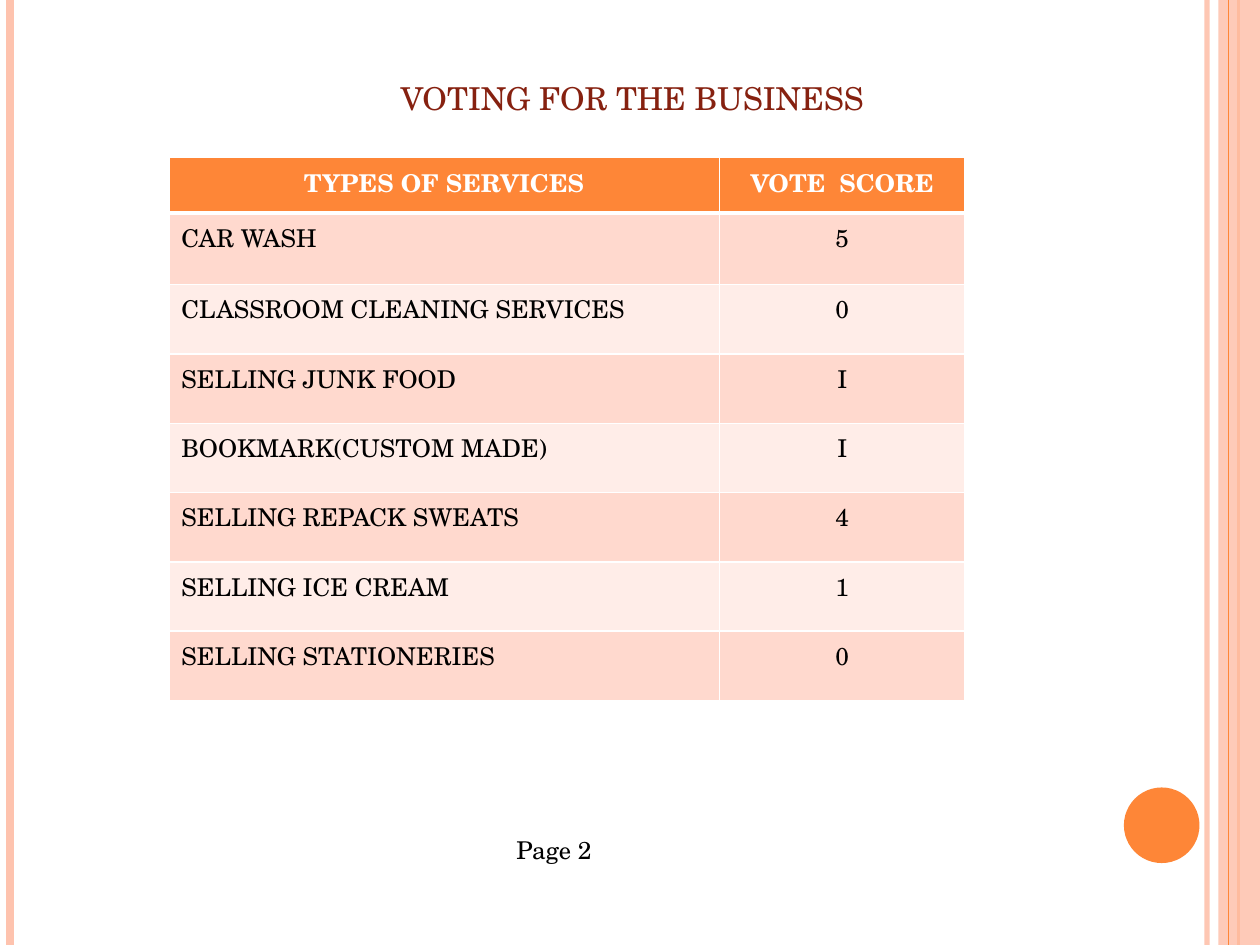
"""Build the slide with the vote scores for each business idea."""
from dataclasses import dataclass
from typing import Optional

from lxml.etree import SubElement
from pptx import Presentation
from pptx.dml.color import RGBColor
from pptx.enum.shapes import MSO_CONNECTOR as Connector, MSO_SHAPE as Preset
from pptx.enum.text import MSO_ANCHOR as Anchor, MSO_AUTO_SIZE as AutoSize, PP_ALIGN as Align
from pptx.oxml.ns import qn
from pptx.util import Inches, Pt


@dataclass(frozen=True)
class Theme:
    """Colours, font and type sizes of the slide."""
    orange: str = "FE8637"
    peach: str = "FEC3AE"
    brown: str = "862110"
    white: str = "FFFFFF"
    black: str = "000000"
    bands: tuple = ("FFD9CE", "FFEDE8")
    font: str = "TeX Gyre Schola"
    title_size: int = 18
    text_size: int = 14


@dataclass(frozen=True)
class Stripe:
    """A vertical line over the full slide height."""
    x: float
    color: str
    weight: float
    alpha: Optional[int] = None


@dataclass(frozen=True)
class Block:
    """A filled preset shape without an outline."""
    preset: Preset
    box: tuple
    color: str
    alpha: Optional[int] = None


@dataclass(frozen=True)
class Service:
    """A proposed service and its votes."""
    name: str
    score: str


THEME = Theme()
SLIDE_SIZE = (10, 7.5)
LOWER_STRIPES = (
    Stripe(9.58, THEME.peach, 3, 93),
    Stripe(0.08, THEME.peach, 4.5),
    Stripe(9.83, THEME.orange, 1.5),
)
SIDE_BAND = Block(Preset.RECTANGLE, (9.67, 0, 0.33, 7.5), THEME.peach, 87)
UPPER_STRIPE = Stripe(9.75, THEME.orange, 0.75)
DISC = Block(Preset.OVAL, (8.92, 6.25, 0.6, 0.6), THEME.orange)
HEADINGS = Service("TYPES OF SERVICES", "VOTE  SCORE")
SERVICES = (
    Service("CAR WASH", "5"),
    Service("CLASSROOM CLEANING SERVICES", "0"),
    Service("SELLING JUNK FOOD", "I"),
    Service("BOOKMARK(CUSTOM MADE)", "I"),
    Service("SELLING REPACK SWEATS", "4"),
    Service("SELLING ICE CREAM", "1"),
    Service("SELLING STATIONERIES", "0"),
)
COLUMN_WIDTHS = (4.37, 1.95)
ROW_HEIGHTS = (0.44, 0.57) + (0.55,) * 6


def set_alpha(fill, percent: Optional[int]) -> None:
    """Make a solid fill partly transparent."""
    if percent is not None:
        color = fill._xPr.find(qn("a:solidFill"))[0]
        SubElement(color, qn("a:alpha"), val=str(percent * 1000))


def draw_stripe(slide, stripe: Stripe) -> None:
    """Draw one vertical line."""
    x = Inches(stripe.x)
    line = slide.shapes.add_connector(Connector.STRAIGHT, x, 0, x, Inches(SLIDE_SIZE[1]))
    line.line.color.rgb = RGBColor.from_string(stripe.color)
    line.line.width = Pt(stripe.weight)
    set_alpha(line.line.fill, stripe.alpha)
    SubElement(line._element.spPr, qn("a:effectLst"))


def draw_block(slide, block: Block) -> None:
    """Draw one filled shape."""
    shape = slide.shapes.add_shape(block.preset, *map(Inches, block.box))
    shape.shadow.inherit = False
    shape.fill.solid()
    shape.fill.fore_color.rgb = RGBColor.from_string(block.color)
    set_alpha(shape.fill, block.alpha)
    shape.line.fill.background()


def write(frame, text: str, color: str, size: int, align: Align = Align.LEFT,
          bold: bool = False) -> None:
    """Put one formatted paragraph in a text frame."""
    frame.text = text
    paragraph = frame.paragraphs[0]
    paragraph.alignment = align
    font = paragraph.runs[0].font
    font.name = THEME.font
    font.size = Pt(size)
    font.bold = bold
    font.color.rgb = RGBColor.from_string(color)


def write_label(shape, box: tuple, text: str, color: str, size: int) -> None:
    """Place a single-line label that does not wrap."""
    shape.left, shape.top, shape.width, shape.height = map(Inches, box)
    frame = shape.text_frame
    frame.word_wrap = False
    frame.auto_size = AutoSize.SHAPE_TO_FIT_TEXT
    frame.vertical_anchor = Anchor.TOP
    write(frame, text, color, size)


def draw_borders(cell, bottom: float) -> None:
    """Give a cell thin white borders and its own bottom weight."""
    properties = cell._tc.get_or_add_tcPr()
    for side, weight in (("L", 1), ("R", 1), ("T", 1), ("B", bottom)):
        border = SubElement(properties, qn(f"a:ln{side}"), w=str(Pt(weight)))
        fill = SubElement(border, qn("a:solidFill"))
        SubElement(fill, qn("a:srgbClr"), val=THEME.white)


def draw_votes(slide) -> None:
    """Draw the table of services and scores."""
    rows = (HEADINGS,) + SERVICES
    box = (1.34, 1.25, sum(COLUMN_WIDTHS), sum(ROW_HEIGHTS))
    table = slide.shapes.add_table(len(rows), 2, *map(Inches, box)).table
    for column, width in zip(table.columns, COLUMN_WIDTHS):
        column.width = Inches(width)
    for index, (service, height) in enumerate(zip(rows, ROW_HEIGHTS)):
        table.rows[index].height = Inches(height)
        heading = index == 0
        background = THEME.orange if heading else THEME.bands[(index - 1) % 2]
        color = THEME.white if heading else THEME.black
        name_align = Align.CENTER if heading else Align.LEFT
        entries = ((service.name, name_align), (service.score, Align.CENTER))
        for cell, (text, align) in zip(table.rows[index].cells, entries):
            draw_borders(cell, 3 if heading else 1)
            cell.fill.solid()
            cell.fill.fore_color.rgb = RGBColor.from_string(background)
            write(cell.text_frame, text, color, THEME.text_size, align, heading)


def main() -> None:
    """Build and save the presentation."""
    deck = Presentation()
    deck.slide_width, deck.slide_height = map(Inches, SLIDE_SIZE)
    slide = deck.slides.add_slide(deck.slide_layouts[5])
    for stripe in LOWER_STRIPES:
        draw_stripe(slide, stripe)
    draw_block(slide, SIDE_BAND)
    draw_stripe(slide, UPPER_STRIPE)
    draw_block(slide, DISC)
    draw_votes(slide)
    write_label(slide.shapes.title, (3.08, 0.58, 3.93, 0.4), "VOTING FOR THE BUSINESS",
                THEME.brown, THEME.title_size)
    page_label = slide.shapes.add_textbox(0, 0, 0, 0)
    write_label(page_label, (4, 6.58, 0.81, 0.34), "Page 2", THEME.black, THEME.text_size)
    deck.save("out.pptx")


if __name__ == "__main__":
    main()
